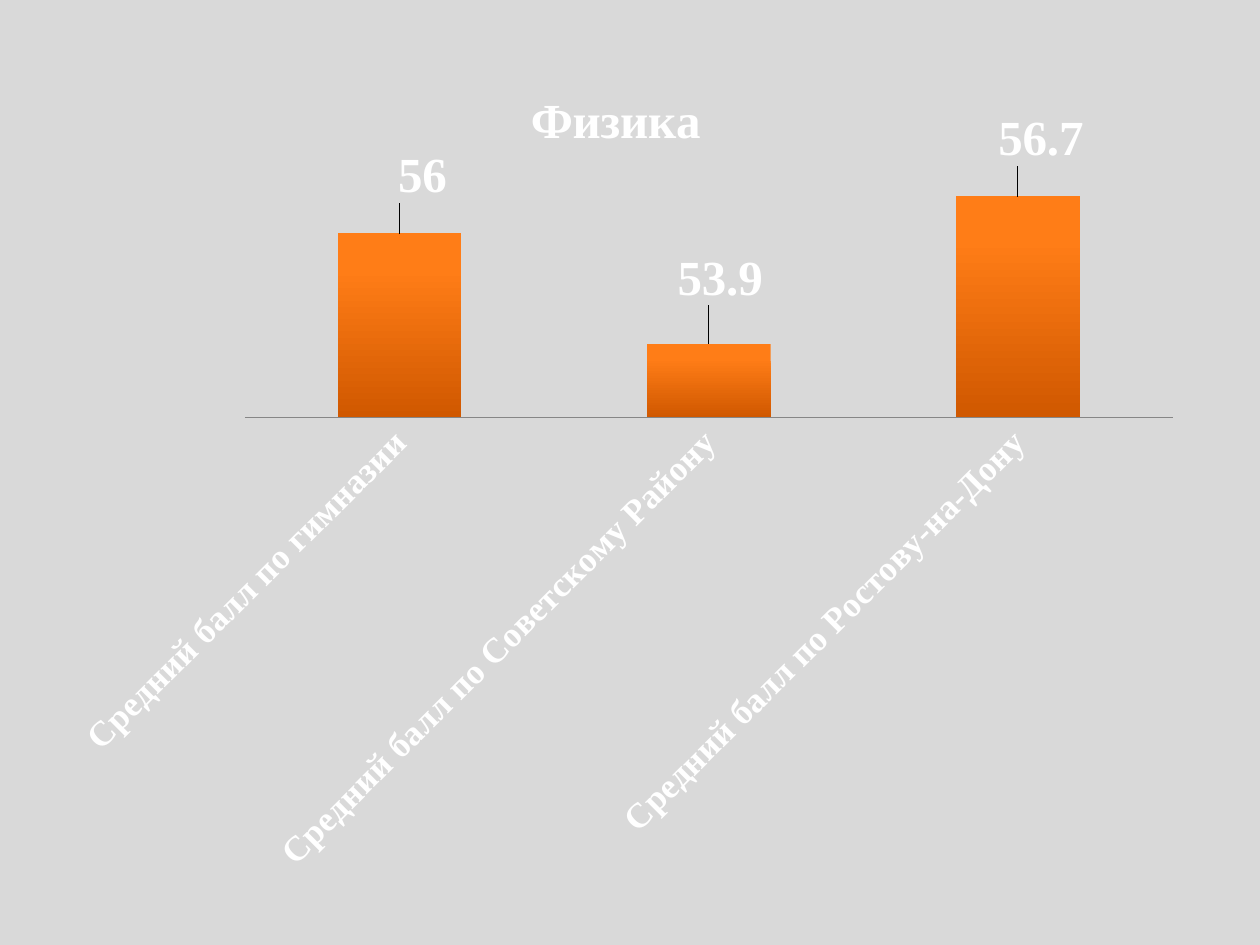
from lxml import etree
from pptx import Presentation
from pptx.chart.data import CategoryChartData
from pptx.dml.color import RGBColor
from pptx.enum.chart import XL_CHART_TYPE, XL_LABEL_POSITION, XL_TICK_MARK
from pptx.oxml import parse_xml
from pptx.util import Cm, Pt

COLUMN = XL_CHART_TYPE.COLUMN_CLUSTERED
ABOVE = XL_LABEL_POSITION.OUTSIDE_END
NO_TICK = XL_TICK_MARK.NONE
NS = "http://schemas.openxmlformats.org/drawingml/2006/chart"
NO_LEADERS = (
    f'<c:extLst xmlns:c="{NS}">'
    '<c:ext uri="{CE6537A1-D6FC-4f65-9D91-7224C49458BB}" '
    'xmlns:c15="http://schemas.microsoft.com/office/drawing/2012/chart">'
    '<c15:showLeaderLines val="0"/></c:ext></c:extLst>')

# Content: category, mean score, label shift as a share of the chart
TITLE = "Физика "
SCORES = [
    ("Средний балл по гимназии", 56, (0.02, -0.03)),
    ("Средний балл по Советскому Району", 53.9, (0.01, -0.04)),
    ("Средний балл по Ростову-на-Дону", 56.7, (0.02, -0.03)),
]

THEME = {
    "back": RGBColor.from_string("D9D9D9"),
    "text": RGBColor.from_string("FFFFFF"),
    "line": RGBColor.from_string("868686"),
    "bar": [(0.2, RGBColor.from_string("FF7D17")),
            (1, RGBColor.from_string("D05800"))],
    "font": "Times New Roman",
    "large": Pt(28),
    "small": Pt(20),
}


def set_all(item, values):
    for name, value in values.items():
        setattr(item, name, value)


def set_font(font, size):
    set_all(font, {"name": THEME["font"], "size": THEME[size], "bold": True})
    font.color.rgb = THEME["text"]


def place(part, index, **values):
    """Give a chart part a manual layout."""
    for old in part.findall(f"{{{NS}}}layout"):
        part.remove(old)
    layout = etree.Element(f"{{{NS}}}layout")
    manual = etree.SubElement(layout, f"{{{NS}}}manualLayout")
    for name, value in values.items():
        etree.SubElement(manual, f"{{{NS}}}{name}").set("val", str(value))
    part.insert(index, layout)


# Slide
deck = Presentation()
deck.slide_width, deck.slide_height = Cm(25.4), Cm(19.05)
slide = deck.slides.add_slide(deck.slide_layouts[6])
slide.background.fill.solid()
slide.background.fill.fore_color.rgb = THEME["back"]

# Chart
data = CategoryChartData()
data.categories = [name for name, _, _ in SCORES]
data.add_series("Series 1", [score for _, score, _ in SCORES])
chart = slide.shapes.add_chart(
    COLUMN, Cm(1.09), Cm(1.12), Cm(23.01), Cm(16.79), data).chart
chart.has_legend = False
set_font(chart.font, "small")
root = chart._chartSpace
place(root.xpath(".//c:plotArea")[0], 0, layoutTarget="outer",
      xMode="edge", yMode="edge", x=0.02, y=0.15, w=0.96, h=0.83)

# Title
chart.has_title = True
chart.chart_title.text_frame.text = TITLE
set_font(chart.chart_title.text_frame.paragraphs[0].runs[0].font, "large")
place(root.xpath("./c:chart/c:title")[0], 1,
      xMode="edge", yMode="edge", x=0.41, y=0.03)

# Axes
set_all(chart.value_axis, {
    "minimum_scale": 52.5, "maximum_scale": 57,
    "has_major_gridlines": False, "visible": False})
axis = chart.category_axis
set_all(axis, {"major_tick_mark": NO_TICK, "minor_tick_mark": NO_TICK})
set_font(axis.tick_labels.font, "small")
axis.format.line.color.rgb = THEME["line"]
root.xpath(".//c:catAx/c:txPr/a:bodyPr")[0].set("rot", str(-45 * 60000))

# Bars
plot = chart.plots[0]
set_all(plot, {"gap_width": 150, "vary_by_categories": False})
bars = plot.series[0]
fill = bars.format.fill
fill.gradient()
fill.gradient_angle = 270
for stop, (where, tone) in zip(fill.gradient_stops, THEME["bar"]):
    stop.position = where
    stop.color.rgb = tone

# Value labels
labels = bars.data_labels
set_all(labels, {"show_value": True, "position": ABOVE})
set_font(labels.font, "large")
for i in range(len(SCORES)):
    label = bars.points[i].data_label
    set_font(label.font, "large")
    label.position = ABOVE
for part, (_, _, (x, y)) in zip(root.xpath(".//c:dLbl"), SCORES):
    place(part, 1, x=x, y=y)
root.xpath(".//c:ser/c:dLbls")[0].append(parse_xml(NO_LEADERS))

deck.save("out.pptx")
